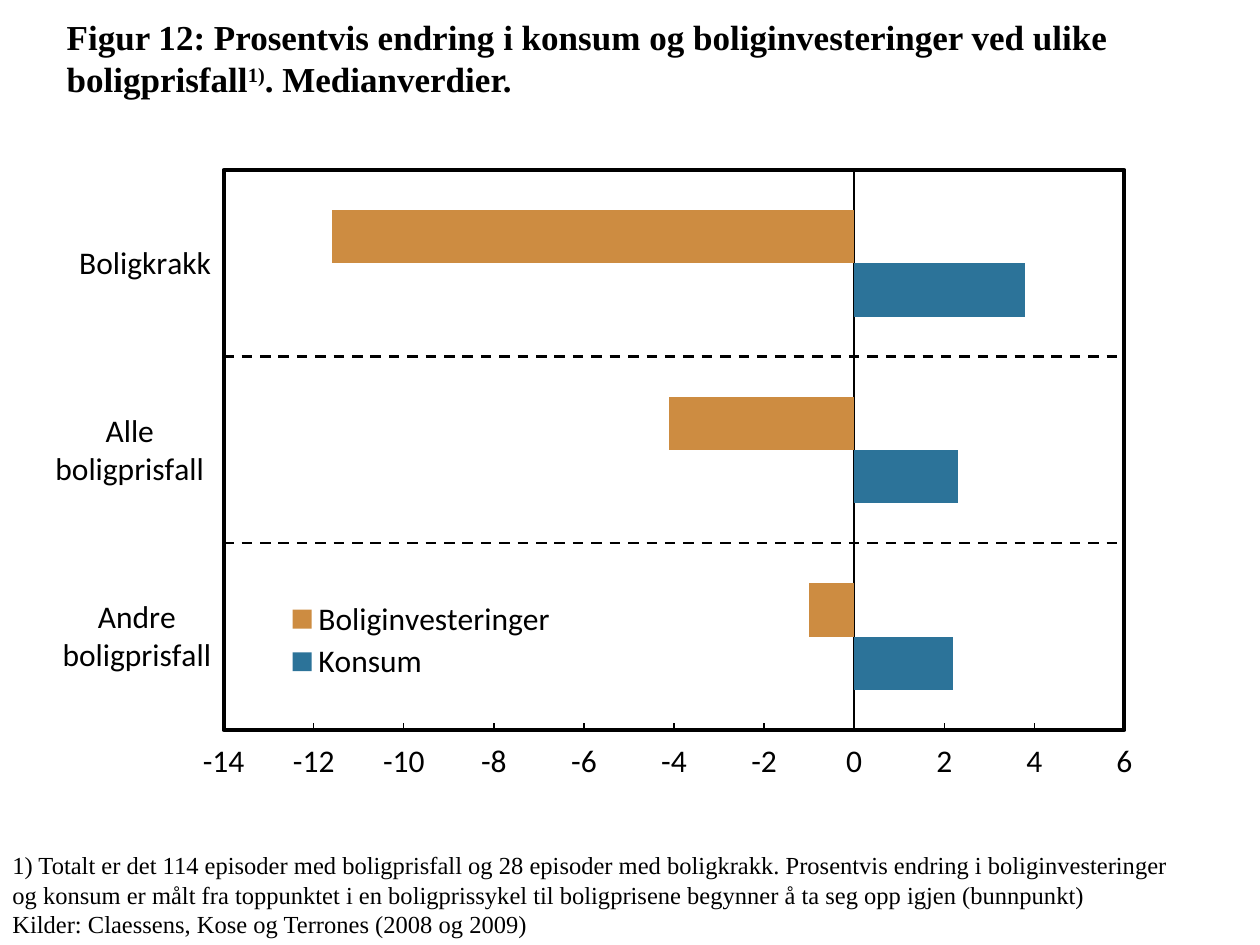
"""Build the slide with a bar chart of consumption and housing investment during house price falls."""
from pptx import Presentation
from pptx import util as u
from pptx.chart import data as chart_data
from pptx.dml import color
from pptx.enum import chart as charts, dml, shapes, text
from pptx.oxml import parse_xml
from pptx.oxml.ns import nsdecls, qn

COLORS = {"ink": "000000", "Konsum": "2C7399", "Boliginvesteringer": "CD8C41"}
SERIES = {"Konsum": (2.2, 2.3, 3.8), "Boliginvesteringer": (-1, -4.1, -11.6)}
INK = color.RGBColor.from_string(COLORS["ink"])


def add_span(para, wording, size, bold=False):
    span = para.add_run()
    span.text = wording
    span.font.name = "Times New Roman"
    span.font.size = u.Pt(size)
    span.font.bold = bold
    span.font.color.rgb = INK
    return span


def place(element, index, target, x, y, width, height):
    for old in element.findall(qn("c:layout")):
        element.remove(old)
    element.insert(index, parse_xml(
        f'<c:layout {nsdecls("c")}><c:manualLayout>{target}'
        '<c:xMode val="edge"/><c:yMode val="edge"/>'
        f'<c:x val="{x}"/><c:y val="{y}"/><c:w val="{width}"/><c:h val="{height}"/>'
        '</c:manualLayout></c:layout>'))


deck = Presentation()
deck.slide_width, deck.slide_height = u.Cm(25.4), u.Cm(19.05)
page = deck.slides.add_slide(deck.slide_layouts[5])

title = page.shapes.title
title.left, title.top, title.width, title.height = u.Cm(1.09), u.Cm(0), u.Cm(23.8), u.Cm(3.18)
frame = title.text_frame
frame.word_wrap = True
frame.auto_size = text.MSO_AUTO_SIZE.NONE
frame.vertical_anchor = text.MSO_ANCHOR.MIDDLE
frame.margin_bottom = u.Cm(0.97)
para = frame.paragraphs[0]
para.alignment = text.PP_ALIGN.LEFT
add_span(para, "Figur 12: Prosentvis endring i konsum og boliginvesteringer ved ulike boligprisfall", 20, True)
add_span(para, "1)", 20, True)._r.get_or_add_rPr().set("baseline", "30000")
add_span(para, ". Medianverdier.", 20, True)

numbers = chart_data.CategoryChartData()
numbers.categories = ["Andre\nboligprisfall", "Alle \nboligprisfall ", "Boligkrakk"]
for name, values in SERIES.items():
    numbers.add_series(name, values)
chart = page.shapes.add_chart(
    charts.XL_CHART_TYPE.BAR_CLUSTERED,
    u.Cm(-1.09), u.Cm(3.12), u.Cm(25.22), u.Cm(13.89), numbers).chart
chart.has_title = False
chart.font.name = "Calibri"
chart.font.size = u.Pt(18)
chart.font.color.rgb = INK

plot = chart.plots[0]
plot.gap_width = 150
plot.overlap = 0
plot.vary_by_categories = False
for series in plot.series:
    series.invert_if_negative = False
    series.format.fill.solid()
    series.format.fill.fore_color.rgb = color.RGBColor.from_string(COLORS[series.name])

for axis, tick in ((chart.category_axis, charts.XL_TICK_MARK.NONE),
                   (chart.value_axis, charts.XL_TICK_MARK.INSIDE)):
    axis.has_major_gridlines = False
    axis.major_tick_mark = tick
    axis.minor_tick_mark = charts.XL_TICK_MARK.NONE
    axis.tick_label_position = charts.XL_TICK_LABEL_POSITION.LOW
    axis.format.line.color.rgb = INK
    axis.format.line.width = u.Pt(0.75)
scale = chart.value_axis
scale.minimum_scale, scale.maximum_scale, scale.major_unit = -14, 6, 2
scale.tick_labels.number_format = "0"
scale.tick_labels.number_format_is_linked = False

chart.has_legend = True
chart.legend.position = charts.XL_LEGEND_POSITION.RIGHT
chart.legend.include_in_layout = True
place(chart.legend._element, 1, "", 0.26, 0.64, 0.24, 0.13)
area = chart._chartSpace.chart.plotArea
place(area, 0, '<c:layoutTarget val="inner"/>', 0.222, 0.022, 0.72, 0.813)
area.append(parse_xml(
    f'<c:spPr {nsdecls("c", "a")}><a:noFill/><a:ln w="28575"><a:solidFill>'
    f'<a:srgbClr val="{COLORS["ink"]}"/></a:solidFill></a:ln></c:spPr>'))

for height in (7.19, 10.95):
    divider = page.shapes.add_connector(
        shapes.MSO_CONNECTOR.STRAIGHT, u.Cm(4.5), u.Cm(height), u.Cm(22.63), u.Cm(height))
    divider.line.color.rgb = INK
    divider.line.width = u.Pt(1.5)
    divider.line.dash_style = dml.MSO_LINE.DASH
    divider._element.spPr.append(parse_xml(f'<a:effectLst {nsdecls("a")}/>'))

note = page.shapes.add_textbox(u.Cm(0), u.Cm(17.02), u.Cm(24.28), u.Cm(2.06)).text_frame
note.word_wrap = True
note.auto_size = text.MSO_AUTO_SIZE.SHAPE_TO_FIT_TEXT
add_span(note.paragraphs[0],
         "1) Totalt er det 114 episoder med boligprisfall og 28 episoder med boligkrakk. "
         "Prosentvis endring i boliginvesteringer og konsum er målt fra toppunktet i en "
         "boligprissykel til boligprisene begynner å ta seg opp igjen (bunnpunkt)", 14)
add_span(note.add_paragraph(), "Kilder: Claessens, Kose og Terrones (2008 og 2009)", 14)

deck.save("out.pptx")
